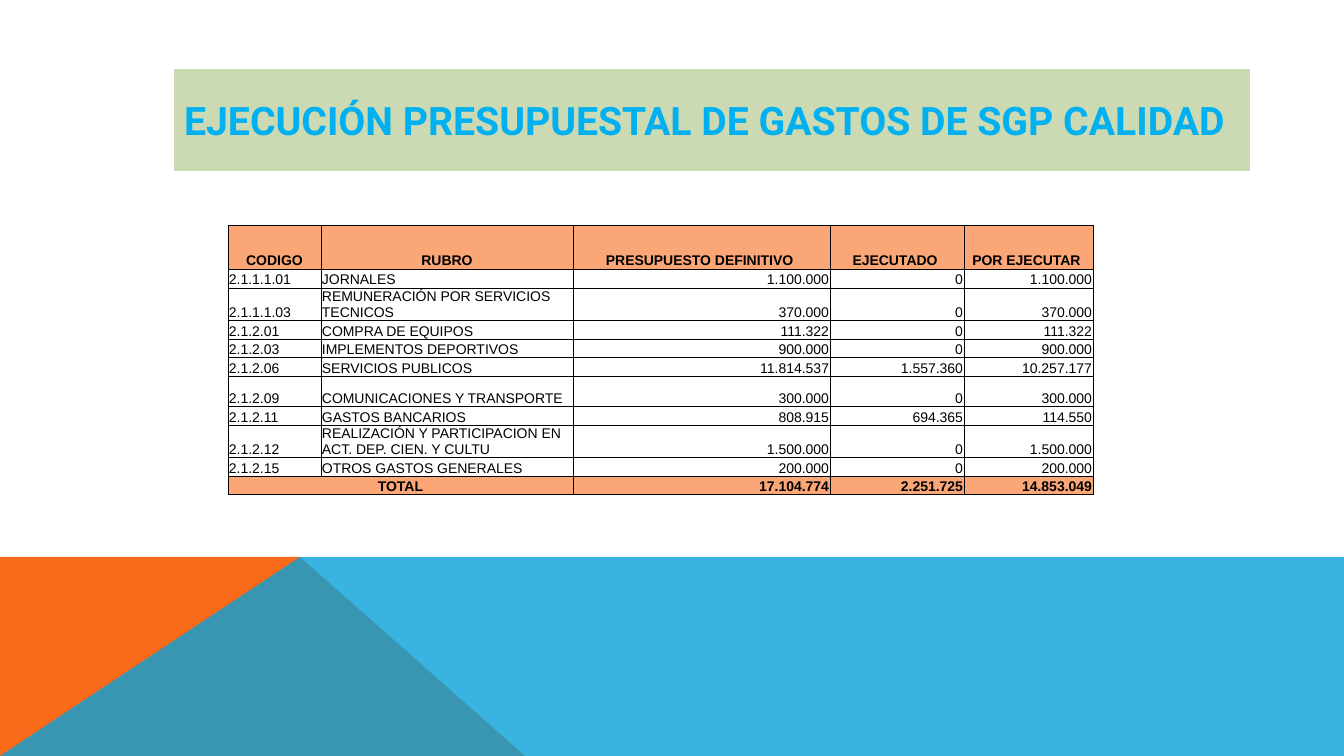
import pptx
import pptx.util
import pptx.dml.color
import pptx.enum.text
import pptx.oxml
import pptx.oxml.ns
from dataclasses import dataclass

TITLE = "EJECUCIÓN PRESUPUESTAL DE GASTOS DE SGP CALIDAD"
HEAD = ("CODIGO", "RUBRO", "PRESUPUESTO DEFINITIVO ", "EJECUTADO ", "POR EJECUTAR ")
ITEMS = [
    ("2.1.1.1.01", "JORNALES", "1.100.000", "0", "1.100.000"),
    ("2.1.1.1.03", "REMUNERACIÓN POR SERVICIOS TECNICOS", "370.000", "0", "370.000"),
    ("2.1.2.01", "COMPRA DE EQUIPOS", "111.322", "0", "111.322"),
    ("2.1.2.03", "IMPLEMENTOS DEPORTIVOS", "900.000", "0", "900.000"),
    ("2.1.2.06", "SERVICIOS PUBLICOS", "11.814.537", "1.557.360", "10.257.177"),
    ("2.1.2.09", "COMUNICACIONES Y TRANSPORTE", "300.000", "0", "300.000"),
    ("2.1.2.11", "GASTOS BANCARIOS", "808.915", "694.365", "114.550"),
    ("2.1.2.12", "REALIZACIÓN Y PARTICIPACION EN ACT. DEP. CIEN. Y CULTU",
     "1.500.000", "0", "1.500.000"),
    ("2.1.2.15", "OTROS GASTOS GENERALES", "200.000", "0", "200.000"),
]
TOTAL = ("TOTAL", "", "17.104.774", "2.251.725", "14.853.049")

WIDE, HIGH = 1344, 756
TITLE_BOX = (174, 69, 1076, 102)
GRID_LEFT, GRID_TOP = 228, 225
COLS = (93, 252, 257, 134, 129)
ROWS = (44, 19, 32, 19, 18, 19, 30, 19, 32, 19, 18)
BAND_TOP = 557
PEAK = 300


@dataclass(frozen=True)
class Theme:
    title: str = "00B0F0"
    panel: str = "CCDAB3"
    head: str = "FBA676"
    ink: str = "000000"
    wedge: str = "F96A1B"
    band: str = "08A1D9"
    alpha: int = 80
    title_font: str = "Roboto"
    grid_font: str = "Arial"
    title_size: int = 28
    grid_size: int = 10
    rule: float = 0.5


THEME = Theme()
SCALE = 914400 / 100.8
ALIGN = pptx.enum.text.PP_ALIGN
ANCHOR = pptx.enum.text.MSO_ANCHOR


def px(size):
    return pptx.util.Emu(round(size * SCALE))


def paint(fill, color):
    fill.solid()
    fill.fore_color.rgb = pptx.dml.color.RGBColor.from_string(color)


def write(frame, text, font, size, color, bold, align):
    para = frame.paragraphs[0]
    para.alignment = align
    run = para.add_run()
    run.text = text
    run.font.name = font
    run.font.size = pptx.util.Pt(size)
    run.font.bold = bold
    run.font.color.rgb = pptx.dml.color.RGBColor.from_string(color)


def draw(slide, points, color):
    pen = slide.shapes.build_freeform(*points[0], scale=SCALE)
    pen.add_line_segments(points[1:], close=True)
    shape = pen.convert_to_shape()
    shape.shadow.inherit = False
    shape.line.fill.background()
    paint(shape.fill, color)
    return shape


def border(cell):
    props = cell._tc.get_or_add_tcPr()
    width = pptx.util.Pt(THEME.rule)
    for spot, side in enumerate(("lnL", "lnR", "lnT", "lnB")):
        props.insert(spot, pptx.oxml.parse_xml(
            f'<a:{side} {pptx.oxml.ns.nsdecls("a")} w="{width}"><a:solidFill>'
            f'<a:srgbClr val="{THEME.ink}"/></a:solidFill></a:{side}>'))


def add_base(slide):
    draw(slide, [(0, HIGH), (0, BAND_TOP), (PEAK, BAND_TOP), (525, HIGH)], THEME.wedge)
    band = draw(slide, [(0, HIGH), (PEAK, BAND_TOP), (WIDE, BAND_TOP), (WIDE, HIGH)],
                THEME.band)
    tint = band.fill._xPr.find(".//" + pptx.oxml.ns.qn("a:srgbClr"))
    tint.append(pptx.oxml.parse_xml(
        f'<a:alpha {pptx.oxml.ns.nsdecls("a")} val="{THEME.alpha * 1000}"/>'))


def add_title(slide):
    title = slide.shapes.title
    title.left, title.top, title.width, title.height = map(px, TITLE_BOX)
    paint(title.fill, THEME.panel)
    frame = title.text_frame
    frame.word_wrap = True
    frame.auto_size = pptx.enum.text.MSO_AUTO_SIZE.NONE
    frame.vertical_anchor = ANCHOR.MIDDLE
    write(frame, TITLE, THEME.title_font, THEME.title_size, THEME.title, True, ALIGN.LEFT)


def add_grid(slide):
    lines = [HEAD, *ITEMS, TOTAL]
    last = len(lines) - 1
    table = slide.shapes.add_table(
        len(lines), len(COLS), px(GRID_LEFT), px(GRID_TOP),
        px(sum(COLS)), px(sum(ROWS))).table
    table.first_row = table.horz_banding = False
    for col, width in zip(table.columns, COLS):
        col.width = px(width)
    for row, height in zip(table.rows, ROWS):
        row.height = px(height)
    table.cell(last, 0).merge(table.cell(last, 1))
    for r, line in enumerate(lines):
        strong = r in (0, last)
        for c, text in enumerate(line):
            cell = table.cell(r, c)
            cell.margin_left = cell.margin_right = cell.margin_top = px(1)
            cell.margin_bottom = 0
            cell.vertical_anchor = ANCHOR.BOTTOM
            if strong:
                paint(cell.fill, THEME.head)
            else:
                cell.fill.background()
            border(cell)
            if cell.is_spanned:
                continue
            if r == 0 or cell.is_merge_origin:
                align = ALIGN.CENTER
            else:
                align = ALIGN.LEFT if c < 2 else ALIGN.RIGHT
            write(cell.text_frame, text, THEME.grid_font, THEME.grid_size,
                  THEME.ink, strong, align)


def main():
    deck = pptx.Presentation()
    deck.slide_width, deck.slide_height = px(WIDE), px(HIGH)
    slide = deck.slides.add_slide(deck.slide_layouts[5])
    add_base(slide)
    add_title(slide)
    add_grid(slide)
    deck.save("out.pptx")


if __name__ == "__main__":
    main()
